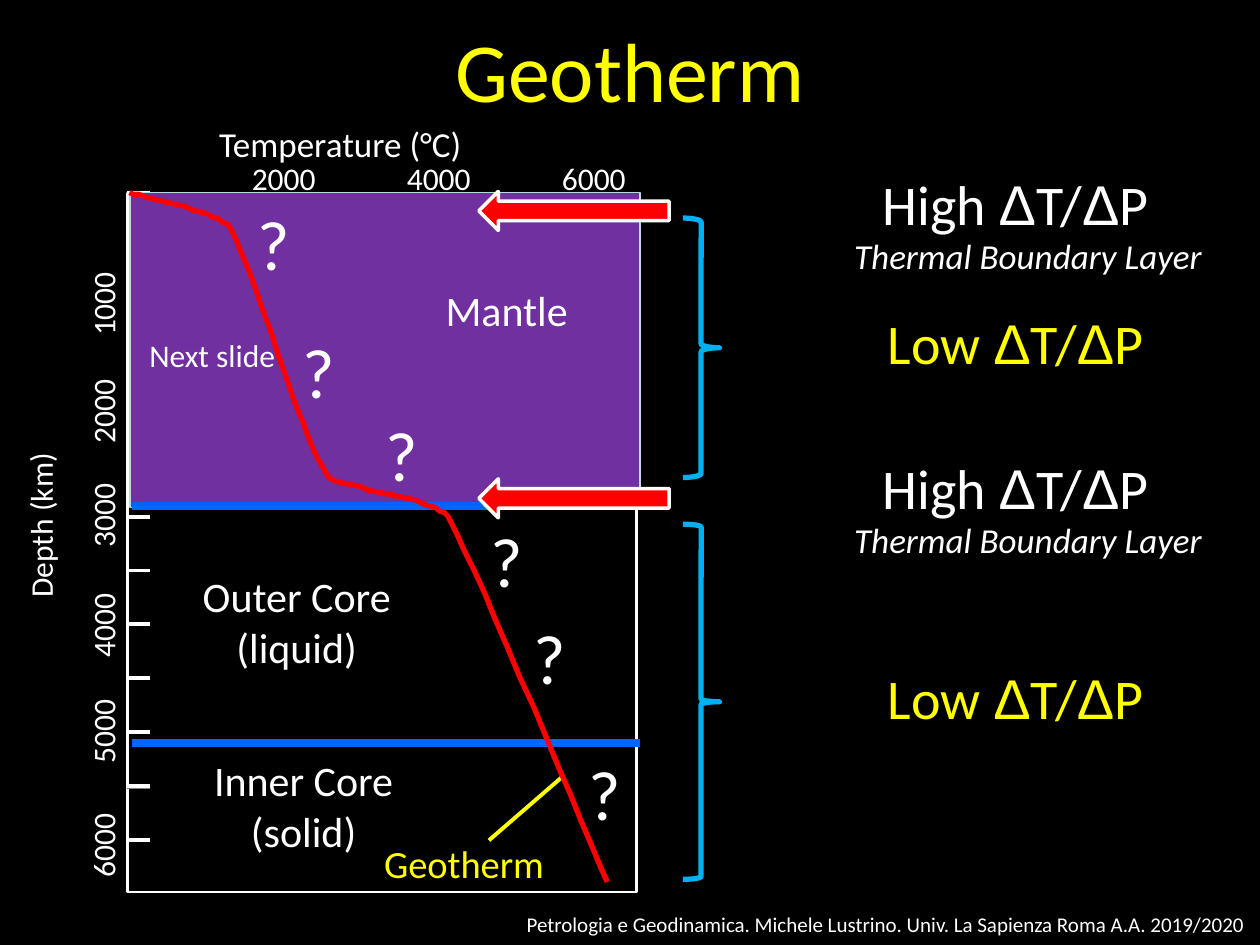
"""Builds the Geotherm slide: temperature against depth inside the Earth."""
import dataclasses
import itertools
import typing

import lxml.etree
import pptx
import pptx.dml.color
import pptx.enum.shapes
import pptx.enum.text
import pptx.oxml.ns
import pptx.slide
import pptx.util

Pt = pptx.util.Pt
SHAPE = pptx.enum.shapes.MSO_SHAPE
ALIGN = pptx.enum.text.PP_ALIGN
ANCHOR = pptx.enum.text.MSO_ANCHOR
COLORS = {
    "black": "000000", "white": "FFFFFF", "yellow": "FFFF00", "red": "FF0000",
    "mantle": "7030A0", "mantle_edge": "B6DCDF", "boundary": "0066FF",
    "brace": "00B0F0", "grey": "808080",
}


@dataclasses.dataclass
class Label:
    text: str
    left: float
    top: float
    width: float
    height: float
    size: float = 18
    color: str = "white"
    align: ALIGN = ALIGN.CENTER
    italic: typing.Optional[bool] = None
    wrap: bool = True
    rotation: float = 0
    anchor: ANCHOR = ANCHOR.TOP


@dataclasses.dataclass
class Block:
    kind: SHAPE
    left: float
    top: float
    width: float
    height: float
    line: str
    weight: float
    fill: typing.Optional[str] = None
    adjust: typing.Optional[float] = None


@dataclasses.dataclass
class Stroke:
    x1: float
    y1: float
    x2: float
    y2: float
    color: str
    weight: float


def rgb(name: str) -> pptx.dml.color.RGBColor:
    return pptx.dml.color.RGBColor.from_string(COLORS[name])


def apply(target: typing.Any, values: typing.Dict[str, typing.Any]) -> None:
    for name, value in values.items():
        setattr(target, name, value)


def set_line(line: typing.Any, color: str, weight: float) -> None:
    line.color.rgb = rgb(color)
    line.width = Pt(weight)


def draw_label(s: pptx.slide.Slide, label: Label) -> None:
    box = s.shapes.add_textbox(Pt(label.left), Pt(label.top), Pt(label.width), Pt(label.height))
    box.rotation = label.rotation
    tf = box.text_frame
    apply(tf, {"word_wrap": label.wrap, "vertical_anchor": label.anchor})
    p = tf.paragraphs[0]
    p.alignment = label.align
    for is_delta, letters in itertools.groupby(label.text, lambda c: c == "Δ"):
        r = p.add_run()
        r.text = "".join(letters)
        apply(r.font, {"name": "Arial" if is_delta else "Calibri",
                       "size": Pt(label.size), "italic": label.italic})
        r.font.color.rgb = rgb(label.color)


def draw_block(s: pptx.slide.Slide, block: Block) -> None:
    sp = s.shapes.add_shape(block.kind, Pt(block.left), Pt(block.top),
                            Pt(block.width), Pt(block.height))
    sp.shadow.inherit = False
    if block.fill:
        sp.fill.solid()
        sp.fill.fore_color.rgb = rgb(block.fill)
    else:
        sp.fill.background()
    set_line(sp.line, block.line, block.weight)
    if block.adjust is not None:
        sp.adjustments[0] = block.adjust


def draw_stroke(s: pptx.slide.Slide, stroke: Stroke) -> None:
    c = s.shapes.add_connector(pptx.enum.shapes.MSO_CONNECTOR.STRAIGHT, Pt(stroke.x1),
                               Pt(stroke.y1), Pt(stroke.x2), Pt(stroke.y2))
    set_line(c.line, stroke.color, stroke.weight)
    lxml.etree.SubElement(c._element.spPr, pptx.oxml.ns.qn("a:effectLst"))


def bezier(knots: typing.Sequence[typing.Tuple[float, float]], t: float) -> typing.Tuple[float, float]:
    weights = ((1 - t) ** 3, 3 * t * (1 - t) ** 2, 3 * t * t * (1 - t), t ** 3)
    x, y = (sum(w * k[axis] for w, k in zip(weights, knots)) for axis in (0, 1))
    return x, y


def draw_curve(s: pptx.slide.Slide, knots: typing.Sequence[typing.Tuple[float, float]],
               color: str, weight: float, steps: int = 16) -> None:
    points = [bezier(knots[i:i + 4], n / steps)
              for i in range(0, len(knots) - 1, 3) for n in range(1, steps + 1)]
    builder = s.shapes.build_freeform(*knots[0], scale=float(Pt(1)))
    builder.add_line_segments(points, close=False)
    sp = builder.convert_to_shape()
    sp.shadow.inherit = False
    sp.fill.background()
    set_line(sp.line, color, weight)


prs = pptx.Presentation()
apply(prs, {"slide_width": Pt(720), "slide_height": Pt(540)})
s = prs.slides.add_slide(prs.slide_layouts[6])
s.background.fill.solid()
s.background.fill.fore_color.rgb = rgb("black")

AXIS_X, SURFACE_Y, TICK_GAP = 72.7, 110.2, 30.83
DEPTH_CENTERS = (173.5, 234.7, 294.5, 357.1, 417.6, 483.1)
QUESTIONS = ((126.7, 110.9), (152.6, 184.3), (200.2, 231.8),
             (259.9, 292.3), (284.4, 347.8), (316.1, 425.5))
GRADIENTS = (("High", 93.6, "white"), ("Low", 172.8, "yellow"),
             ("High", 255.6, "white"), ("Low", 375.8, "yellow"))
GEOTHERM = ((74.2, 110.2), (83.5, 113), (118.8, 120.2), (129.6, 128.2),
            (141.1, 136.8), (176.4, 271.4), (191.5, 275),
            (215.3, 281.5), (247, 285.8), (255.6, 295.2),
            (263.5, 304.6), (328.3, 460.1), (347, 504))

axis = {"align": ALIGN.LEFT, "wrap": False}
labels = [
    Label("Petrologia e Geodinamica. Michele Lustrino. Univ. La Sapienza Roma A.A. 2019/2020",
          285.8, 517, 432.7, 21.6, 12, align=ALIGN.RIGHT, anchor=ANCHOR.MIDDLE),
    Label("Geotherm", 0, 7.2, 720, 64.8, 48, "yellow"),
    Label("Depth (km)", -25.9, 285.1, 97.9, 28.8, rotation=270, **axis),
    Label("Temperature (°C)", 118.1, 66.2, 155.5, 31.7, 20, **axis),
    Label("Next slide", 73.4, 188.6, 95.8, 28.8),
    Label("Geotherm", 212.4, 476.6, 135.4, 33.8, 22, "yellow", ALIGN.LEFT),
    Label("Mantle", 218.2, 159.1, 142.6, 36, 24),
    Label("Outer Core (liquid)", 85.7, 322.6, 167.8, 65.5, 24),
    Label("Inner Core (solid)", 85.7, 427.7, 175.7, 65.5, 24),
]
labels += [Label(str(2000 * (i + 1)), 136.8 + 88.6 * i, 87.1, 51.1, 28.8, **axis)
           for i in range(3)]
labels += [Label(str(1000 * n), 33.3, y - 14.4, 51.1, 28.8, rotation=270, **axis)
           for n, y in enumerate(DEPTH_CENTERS, 1)]
labels += [Label("?", x, y, 59, 55.4, 40) for x, y in QUESTIONS]
labels += [Label(f"{level} ΔT/ΔP", 440.6, y, 279.4, 45.4, 32, color)
           for level, y, color in GRADIENTS]
labels += [Label("Thermal Boundary Layer", 455, y, 265, 31.7, 20, italic=True)
           for y in (130.3, 293)]

ticks = [Stroke(AXIS_X, y, AXIS_X + 13, y, color, 2.25)
         for y, color in [(450, "grey")] + [(SURFACE_Y + TICK_GAP * i, "white") for i in range(13)]]
boundaries = [Stroke(75.6, y, 365.8, y, "boundary", 4.5) for y in (289.4, 424.8)]
pointer = Stroke(279.4, 480.2, 321.8, 443.5, "yellow", 2.25)
arrows = [Block(SHAPE.LEFT_ARROW, 273.6, y, 108.7, 22.3, "white", 2, "red")
          for y in (109.4, 273.6)]
braces = [Block(SHAPE.RIGHT_BRACE, 390.2, y, 20.9, height, "brace", 3, adjust=adjust)
          for y, height, adjust in ((124.6, 148.3, 0.113), (299.5, 203, 0.078))]

draw_block(s, Block(SHAPE.RECTANGLE, AXIS_X, SURFACE_Y, 290.9, 399.6, "white", 1.5))
for tick in ticks:
    draw_stroke(s, tick)
draw_block(s, Block(SHAPE.RECTANGLE, 74.2, SURFACE_Y, 291.6, 180, "mantle_edge", 0.75, "mantle"))
for stroke in boundaries + [pointer]:
    draw_stroke(s, stroke)
draw_curve(s, GEOTHERM, "red", 3)
for block in arrows + braces:
    draw_block(s, block)
for label in labels:
    draw_label(s, label)
prs.save("out.pptx")
